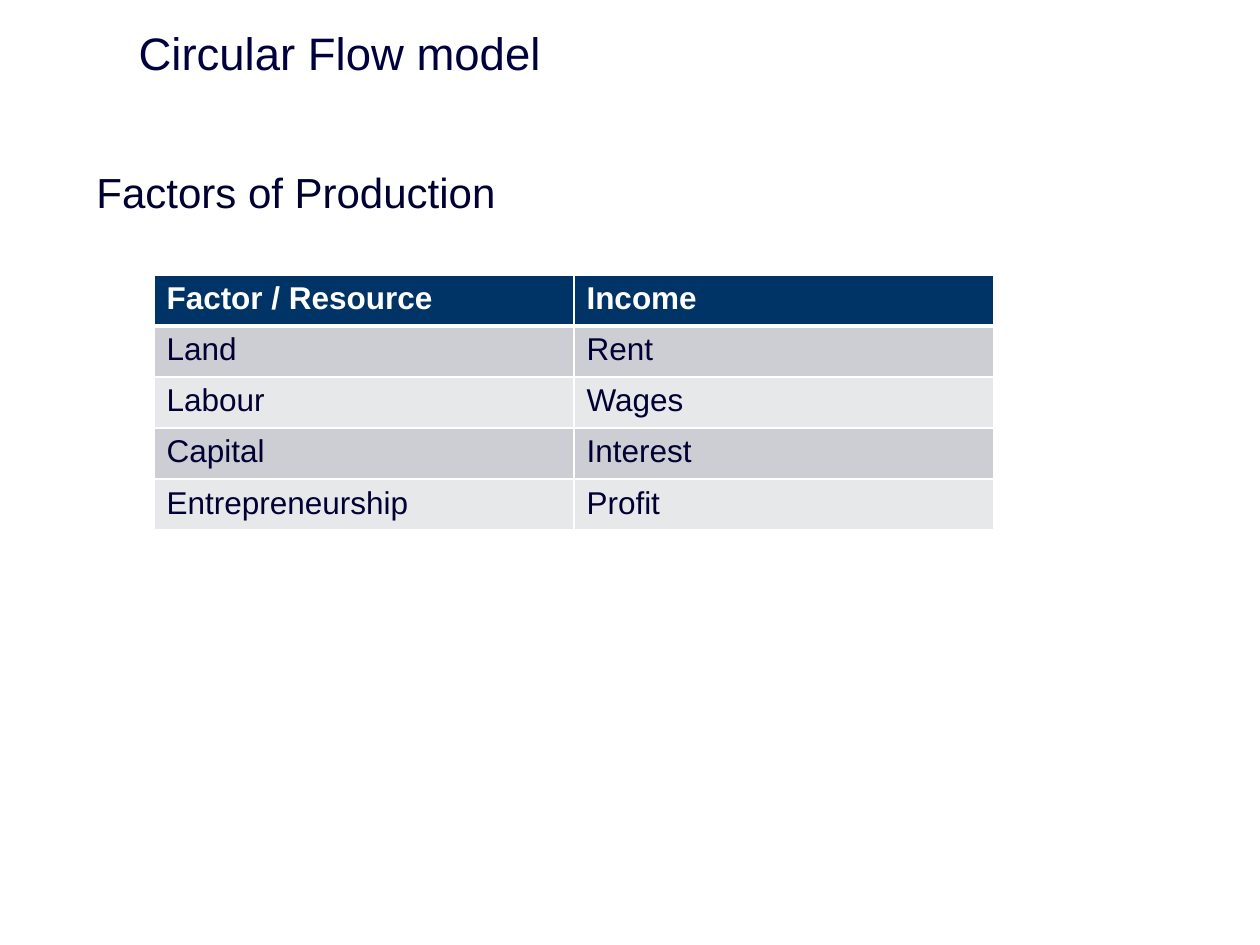
from dataclasses import dataclass

from lxml import etree
from pptx import Presentation
from pptx.dml.color import RGBColor
from pptx.enum.text import MSO_ANCHOR, PP_ALIGN
from pptx.oxml.ns import qn
from pptx.util import Pt

LEFT = PP_ALIGN.LEFT
MIDDLE = MSO_ANCHOR.MIDDLE
TITLE_ONLY = 5


@dataclass(frozen=True)
class Theme:
    font: str = "Arial"
    title: str = "00003E"
    ink: str = "000032"
    white: str = "FFFFFF"
    head: str = "003366"
    bands: tuple = ("CCCED3", "E7E8EA")
    title_size: int = 26
    body_size: int = 24
    cell_size: int = 18


THEME = Theme()
ROWS = [
    ("Factor / Resource", "Income"),
    ("Land", "Rent"),
    ("Labour", "Wages"),
    ("Capital", "Interest"),
    ("Entrepreneurship", "Profit"),
]


def write(frame, text, size, color, bold=False):
    frame.text = text
    para = frame.paragraphs[0]
    para.alignment = LEFT
    font = para.font
    font.name = THEME.font
    font.size = Pt(size)
    font.bold = bold
    font.color.rgb = RGBColor.from_string(color)


def add_title(slide, text):
    title = slide.shapes.title
    title.left, title.top = Pt(72), Pt(11.5)
    title.width, title.height = Pt(648), Pt(36.75)
    title.text_frame.vertical_anchor = MIDDLE
    write(title.text_frame, text, THEME.title_size, THEME.title)


def add_text(slide, text):
    box = slide.shapes.add_textbox(Pt(48), Pt(91.8), Pt(636), Pt(36))
    box.text_frame.word_wrap = True
    write(box.text_frame, text, THEME.body_size, THEME.ink)


def add_edge(cell, side, width):
    line = etree.SubElement(cell._tc.get_or_add_tcPr(), qn(f"a:ln{side}"), w=str(Pt(width)))
    fill = etree.SubElement(line, qn("a:solidFill"))
    etree.SubElement(fill, qn("a:srgbClr"), val=THEME.white)


def style_cell(cell, text, row):
    head = row == 0
    edges = {"L": 1, "R": 1, "T": 3 if row == 1 else 1, "B": 3 if head else 1}
    for side, width in edges.items():
        add_edge(cell, side, width)
    back = THEME.head if head else THEME.bands[(row - 1) % 2]
    cell.fill.solid()
    cell.fill.fore_color.rgb = RGBColor.from_string(back)
    write(cell.text_frame, text, THEME.cell_size, THEME.white if head else THEME.ink, head)


def add_grid(slide, rows):
    col_width, row_height = 240, 29.2
    count, cols = len(rows), len(rows[0])
    table = slide.shapes.add_table(
        count, cols, Pt(88), Pt(157), Pt(cols * col_width), Pt(count * row_height)
    ).table
    for r, texts in enumerate(rows):
        table.rows[r].height = Pt(row_height)
        for c, text in enumerate(texts):
            style_cell(table.cell(r, c), text, r)


def main():
    deck = Presentation()
    deck.slide_width, deck.slide_height = Pt(720), Pt(540)
    slide = deck.slides.add_slide(deck.slide_layouts[TITLE_ONLY])
    add_title(slide, "Circular Flow model")
    add_text(slide, "Factors of Production")
    add_grid(slide, ROWS)
    deck.save("out.pptx")


if __name__ == "__main__":
    main()
